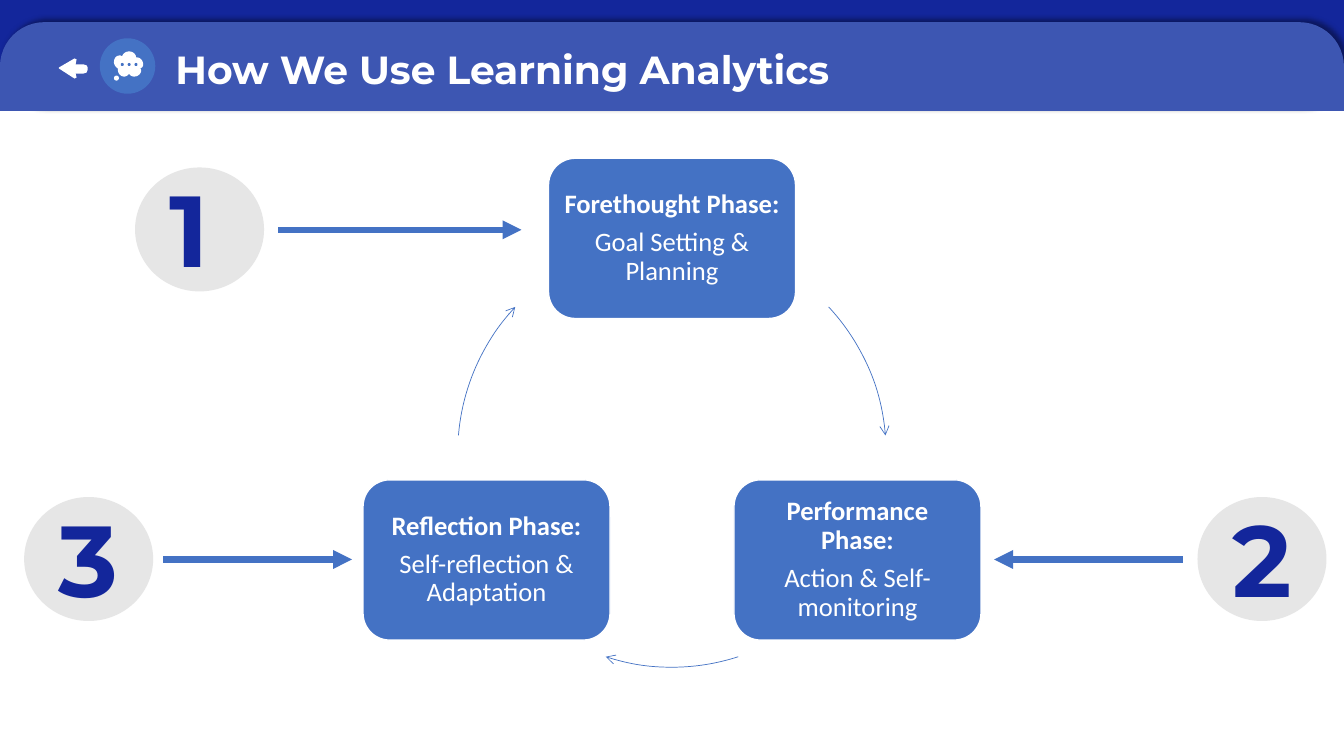
from dataclasses import dataclass

from lxml import etree
from pptx import Presentation
from pptx import util as u
from pptx.dml.color import RGBColor
from pptx.enum import shapes, text
from pptx.oxml import ns

NAVY = RGBColor(0x13, 0x26, 0x9B)
INDIGO = RGBColor(0x3D, 0x56, 0xB2)
BLUE = RGBColor(0x44, 0x72, 0xC4)
GREY = RGBColor(0xE6, 0xE6, 0xE6)
WHITE = RGBColor(0xFF, 0xFF, 0xFF)

WIDTH, HEIGHT = u.Inches(13.33), u.Inches(7.5)
KIND = shapes.MSO_SHAPE
Point = tuple[float, float]


def across(columns: float) -> int:
    """Length of columns, each 1 % of the slide's width."""
    return round(WIDTH * columns / 100)


def down(rows: float) -> int:
    """Length of rows, each 1 % of the slide's height."""
    return round(HEIGHT * rows / 100)


@dataclass(frozen=True)
class Area:
    """Centre and size in columns and rows."""
    x: float
    y: float
    columns: float
    rows: float

    def frame(self) -> tuple[int, int, int, int]:
        return (across(self.x - self.columns / 2), down(self.y - self.rows / 2),
                across(self.columns), down(self.rows))


@dataclass(frozen=True)
class Phase:
    x: float
    y: float
    title: str
    detail: str


@dataclass(frozen=True)
class Step:
    number: str
    x: float
    y: float
    arrow_start: float
    arrow_end: float


PHASES = [
    Phase(50, 31.53, "Forethought Phase:", "Goal Setting & Planning"),
    Phase(63.8, 74.07, "Performance Phase:", "Action & Self-monitoring"),
    Phase(36.2, 74.07, "Reflection Phase:", "Self-reflection & Adaptation"),
]
STEPS = [
    Step("1", 14.85, 30.35, 20.7, 38.8),
    Step("2", 93.9, 73.95, 88, 73.97),
    Step("3", 6.6, 73.95, 12.15, 26.2),
]
CYCLE = Area(50, 59.93, 31.88, 56.67)
CYCLE_ARCS = [(317, 355.3), (72, 108), (184.7, 223)]  # degrees, clockwise

# Icon outlines in hundredths of an inch
BACK_ARROW = [(58.5, 68), (74, 78), (76, 77), (75, 73), (83, 73), (86, 72), (87, 69),
              (87, 67), (86, 65), (83, 64), (75, 64), (76, 59), (74, 58), (58.5, 67)]
CLOUD_START = (128, 51)
CLOUD_CURVES = [
    ((125, 51), (122, 53), (121, 56)), ((121, 56), (120, 55), (119, 55)),
    ((115, 55), (113, 58), (113, 62)), ((113, 64), (115, 67), (117, 68)),
    ((117, 68), (117, 69), (117, 70)), ((117, 73), (120, 76), (123, 76)),
    ((125, 76), (127, 75), (128, 73)), ((129, 75), (131, 76), (133, 76)),
    ((137, 76), (140, 73), (140, 70)), ((140, 69), (140, 69), (139, 68)),
    ((141, 67), (142, 66), (142, 64)), ((142, 60), (139, 57), (136, 57)),
    ((136, 57), (135, 57), (135, 57)), ((135, 54), (132, 51), (128, 51)),
]
CLOUD_DOTS = [(121.3, 64), (128.1, 64), (134.9, 64)]


def add_xml(parent, tag: str, **attributes: str):
    return etree.SubElement(parent, ns.qn(tag), attributes)


def paint(shape, fill: RGBColor) -> None:
    shape.shadow.inherit = False
    shape.fill.solid()
    shape.fill.fore_color.rgb = fill
    shape.line.fill.background()


def add_block(page, kind: shapes.MSO_SHAPE, area: Area, fill: RGBColor):
    block = page.shapes.add_shape(kind, *area.frame())
    paint(block, fill)
    return block


def style_line(shape, points: float, head: str) -> None:
    """Blue line with an arrowhead of the given type at its end."""
    shape.line.color.rgb = BLUE
    shape.line.width = u.Pt(points)
    add_xml(shape.line._get_or_add_ln(), "a:tailEnd", type=head)


def style_span(span, font: str, points: float, colour: RGBColor, bold: bool = True) -> None:
    span.font.name, span.font.size, span.font.bold = font, u.Pt(points), bold
    span.font.color.rgb = colour


def set_frame(box, inset: float) -> None:
    frame = box.text_frame
    frame.word_wrap = True
    frame.vertical_anchor = text.MSO_ANCHOR.MIDDLE
    frame.margin_left = frame.margin_right = u.Inches(inset)
    frame.margin_top = frame.margin_bottom = u.Inches(inset)


def add_outline(page, points: list[Point], fill: RGBColor) -> None:
    corners = [(u.Inches(x / 100), u.Inches(y / 100)) for x, y in points]
    builder = page.shapes.build_freeform(*corners[0])
    builder.add_line_segments(corners[1:], close=True)
    paint(builder.convert_to_shape(), fill)


def cloud_points(steps: int = 6) -> list[Point]:
    """Points along the cubic curves of the cloud."""
    points = [CLOUD_START]
    for first, second, end in CLOUD_CURVES:
        start = points[-1]
        for step in range(1, steps + 1):
            t = step / steps
            weights = ((1 - t) ** 3, 3 * t * (1 - t) ** 2, 3 * t * t * (1 - t), t ** 3)
            knots = (start, first, second, end)
            points.append((sum(w * k[0] for w, k in zip(weights, knots)),
                           sum(w * k[1] for w, k in zip(weights, knots))))
    return points


def add_dot(page, x: float, y: float, size: float, fill: RGBColor) -> None:
    """Round dot; lengths in hundredths of an inch."""
    corner = [u.Inches((value - size / 2) / 100) for value in (x, y)]
    diameter = u.Inches(size / 100)
    paint(page.shapes.add_shape(KIND.OVAL, *corner, diameter, diameter), fill)


def add_header(page) -> None:
    add_block(page, KIND.RECTANGLE, Area(50, 5.8, 100, 11.6), NAVY)
    tab = add_block(page, KIND.ROUNDED_RECTANGLE, Area(50, 8.8, 100, 11.73), INDIGO)
    tab.adjustments[0] = 0.5
    effects = tab._element.spPr.find(ns.qn("a:effectLst"))
    shadow = add_xml(effects, "a:outerShdw", blurRad=str(u.Pt(4)), dist=str(u.Pt(3)),
                     dir="18900000", algn="bl", rotWithShape="0")
    add_xml(add_xml(shadow, "a:srgbClr", val="000000"), "a:alpha", val="40000")
    add_block(page, KIND.RECTANGLE, Area(50, 11.73, 100, 5.87), INDIGO)

    add_outline(page, BACK_ARROW, WHITE)
    box = page.shapes.add_textbox(*Area(41.95, 9.07, 59.26, 7.2).frame())
    set_frame(box, 0.1)
    box.text_frame.text = "How We Use Learning Analytics"
    style_span(box.text_frame.paragraphs[0].runs[0], "Montserrat", 28, WHITE)

    add_dot(page, 126.5, 65.5, 55, BLUE)
    add_dot(page, 115.5, 77.5, 5, WHITE)
    add_outline(page, cloud_points(), WHITE)
    for x, y in CLOUD_DOTS:
        add_dot(page, x, y, 3, BLUE)


def add_phase(page, phase: Phase) -> None:
    area = Area(phase.x, phase.y, 18.38, 21.2)
    box = add_block(page, KIND.ROUNDED_RECTANGLE, area, BLUE)
    box.line.color.rgb = WHITE
    box.line.width = u.Pt(1)
    set_frame(box, 0.08)
    box.text_frame.text = f"{phase.title}\n{phase.detail}"
    for para, bold in zip(box.text_frame.paragraphs, (True, False)):
        para.alignment = text.PP_ALIGN.CENTER
        para.line_spacing = 0.9
        para.space_after = u.Pt(6.65)
        style_span(para.runs[0], "Calibri", 19, WHITE, bold)


def add_cycle_arc(page, start: float, end: float) -> None:
    arc = page.shapes.add_shape(KIND.ARC, *CYCLE.frame())
    arc.shadow.inherit = False
    arc.fill.background()
    for index, degrees in enumerate((start, end)):
        arc.adjustments[index] = degrees * 0.6  # 60000 units per degree over 100000
    style_line(arc, 0.5, "arrow")


def add_step(page, step: Step) -> None:
    arrow = page.shapes.add_connector(
        shapes.MSO_CONNECTOR.STRAIGHT, across(step.arrow_start), down(step.y + 0.05),
        across(step.arrow_end), down(step.y + 0.05))
    style_line(arrow, 4.5, "triangle")
    add_xml(arrow._element.spPr, "a:effectLst")

    add_block(page, KIND.OVAL, Area(step.x, step.y, 9.6, 16.4), GREY)
    plate = add_block(page, KIND.RECTANGLE, Area(step.x, step.y - 0.25, 6.83, 10.67), GREY)
    set_frame(plate, 0.1)
    para = plate.text_frame.paragraphs[0]
    para.alignment = text.PP_ALIGN.CENTER
    for content, points, colour in ((step.number, 72, NAVY), (" ", 54, WHITE)):
        span = para.add_run()
        span.text = content
        style_span(span, "Montserrat", points, colour)


def main() -> None:
    deck = Presentation()
    deck.slide_width, deck.slide_height = WIDTH, HEIGHT
    page = deck.slides.add_slide(deck.slide_layouts[6])
    add_header(page)
    for phase, arc in zip(PHASES, CYCLE_ARCS):
        add_phase(page, phase)
        add_cycle_arc(page, *arc)
    for step in STEPS:
        add_step(page, step)
    deck.save("out.pptx")


if __name__ == "__main__":
    main()
